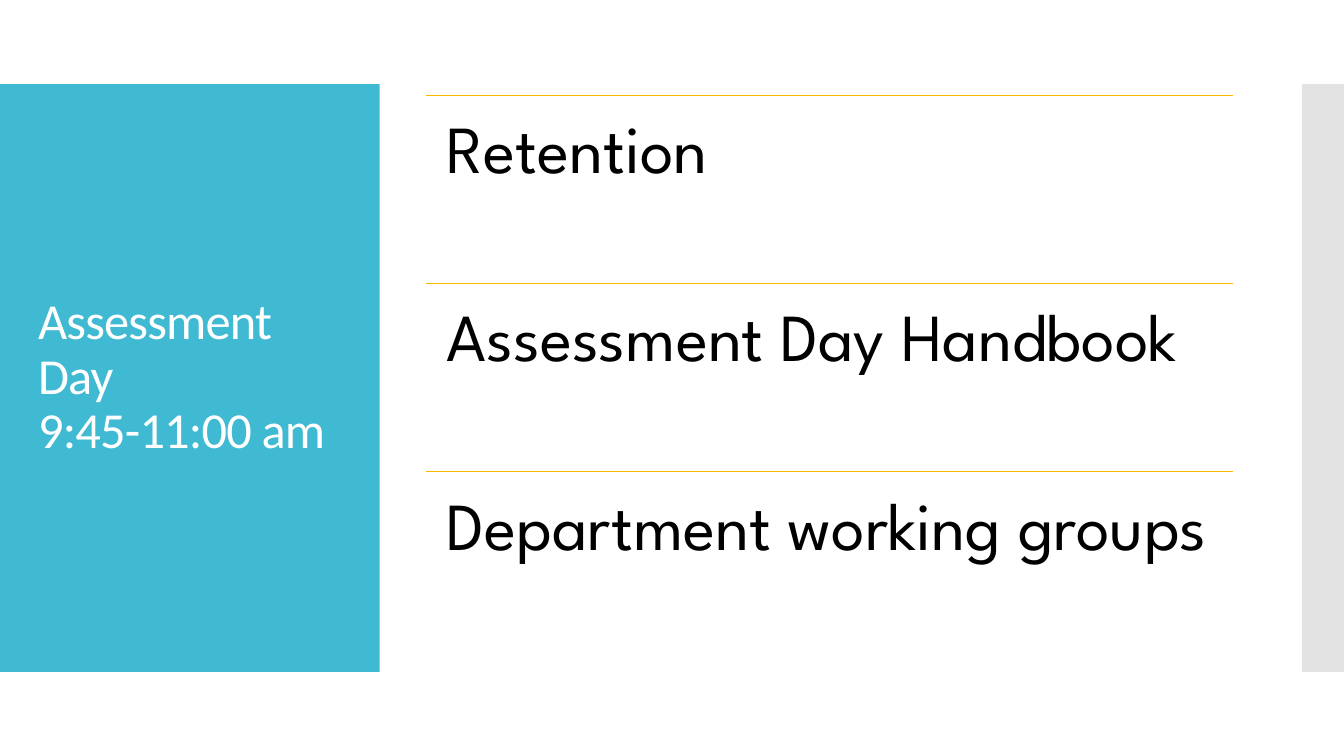
from lxml.etree import SubElement as Sub
from pptx import Presentation
from pptx.dml.color import RGBColor as Rgb
from pptx.enum.shapes import MSO_CONNECTOR as Conn, MSO_SHAPE as Kind
from pptx.enum.text import MSO_ANCHOR as Anchor, MSO_AUTO_SIZE as Fit, PP_ALIGN as Align
from pptx.oxml.ns import qn
from pptx.util import Pt

HUES = {"teal": "40BAD2", "grey": "C8C8C8", "gold": "FAB900", "white": "FFFFFF", "black": "000000"}
TOPICS = ["Retention", "Assessment Day Handbook", "Department working groups"]


def hue(name):
    return Rgb.from_string(HUES[name])


def place(shape, left, top, width, height):
    shape.left, shape.top = Pt(left), Pt(top)
    shape.width, shape.height = Pt(width), Pt(height)


def style(para, font, size, color):
    para.alignment = Align.LEFT
    para.line_spacing = 0.9
    for run in para.runs:
        run.font.name = font
        run.font.size = Pt(size)
        run.font.color.rgb = hue(color)


def add_panel(slide, box, color):
    panel = slide.shapes.add_shape(Kind.RECTANGLE, *map(Pt, box))
    panel.shadow.inherit = False
    panel.fill.solid()
    panel.fill.fore_color.rgb = hue(color)
    panel.line.fill.background()
    slide.shapes.title.element.addprevious(panel.element)
    return panel


def add_title(slide, box, text):
    left, top, width, height = box
    add_panel(slide, box, "teal")
    title = slide.shapes.title
    place(title, left + 20, top + 28.8, width - 39.6, height - 57.6)
    frame = title.text_frame
    frame.word_wrap = True
    frame.auto_size = Fit.NONE
    frame.vertical_anchor = Anchor.MIDDLE
    para = frame.paragraphs[0]
    para.text = text
    style(para, "Calibri", 36, "white")
    for run in para.runs:
        run.font._element.set("spc", "-60")


def add_strip(slide, box):
    strip = add_panel(slide, box, "grey")
    color = strip.element.spPr.find(qn("a:solidFill"))[0]
    Sub(color, qn("a:alpha")).set("val", "50000")


def add_rule(slide, left, top, width):
    rule = slide.shapes.add_connector(Conn.STRAIGHT, Pt(left), Pt(top), Pt(left + width), Pt(top))
    rule.line.color.rgb = hue("gold")
    rule.line.width = Pt(0.85)
    Sub(rule.element.spPr, qn("a:effectLst"))


def add_topics(slide, box, topics):
    left, top, width, height = box
    step = height / len(topics)
    for i, topic in enumerate(topics):
        y = top + i * step
        add_rule(slide, left, y, width)
        label = slide.shapes.add_textbox(Pt(left), Pt(y), Pt(width), Pt(step))
        frame = label.text_frame
        frame.word_wrap = True
        frame.margin_left = frame.margin_right = Pt(14.4)
        frame.margin_top = frame.margin_bottom = Pt(14.4)
        frame.text = topic
        style(frame.paragraphs[0], "League Spartan", 48, "black")


def main():
    deck = Presentation()
    deck.slide_width, deck.slide_height = Pt(960), Pt(540)
    slide = deck.slides.add_slide(deck.slide_layouts[5])
    add_title(slide, (0, 60, 271.2, 420), "Assessment Day\n9:45-11:00 am")
    add_strip(slide, (930, 60, 30, 420))
    add_topics(slide, (304.6, 68.2, 576, 403.2), TOPICS)
    deck.save("out.pptx")


if __name__ == "__main__":
    main()
